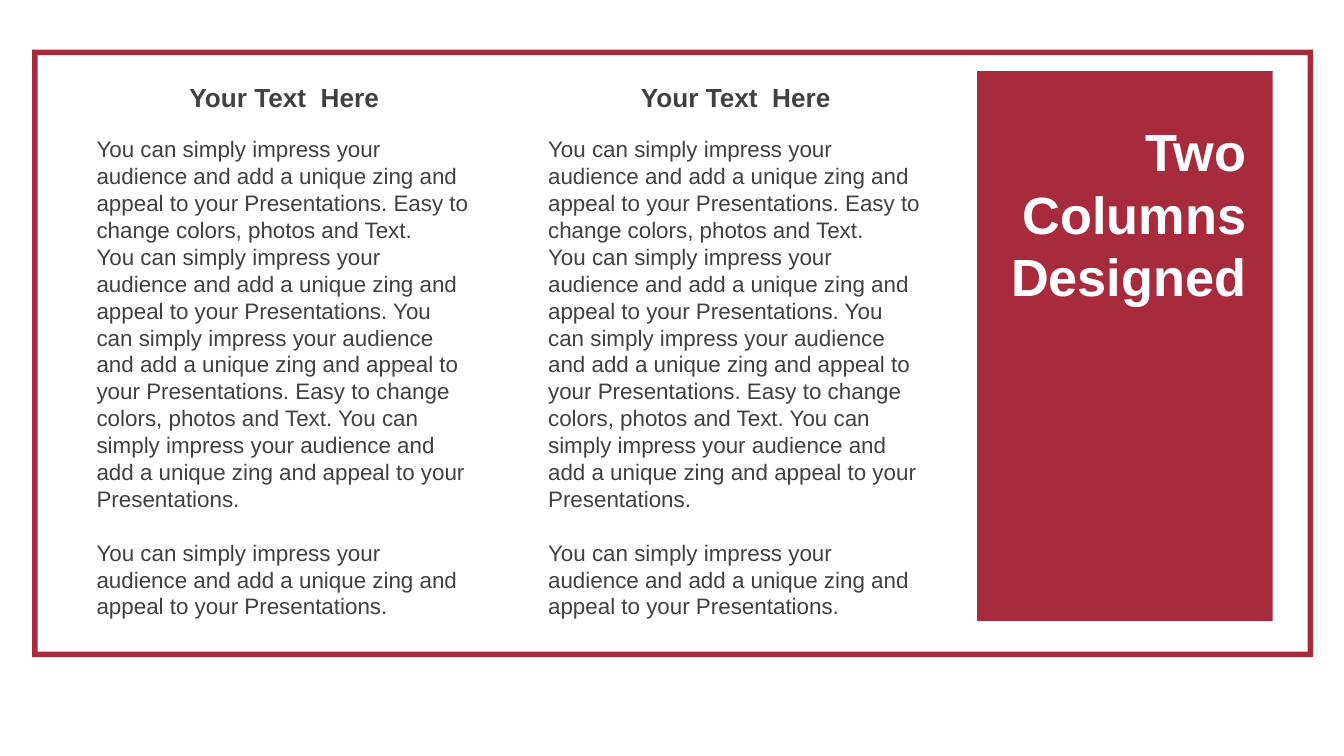
from pptx import Presentation
from pptx.dml.color import RGBColor
from pptx.enum.shapes import MSO_SHAPE as Shape
from pptx.enum.text import PP_ALIGN as Align
from pptx.util import Inches, Pt

CRIMSON, WHITE, CHARCOAL = "A82B3D", "FFFFFF", "404040"
TITLE = "Two Columns Designed"
HEADING = "Your Text  Here"
IMPRESS = ("You can simply impress your audience and add a unique zing "
           "and appeal to your Presentations.")
CHANGE = "Easy to change colors, photos and Text."
BODY = [
    f"{IMPRESS} {CHANGE}",
    f"{IMPRESS} {IMPRESS} {CHANGE} {IMPRESS}",
    IMPRESS,
]
TITLE_STYLE = {"size": Pt(28), "bold": True, "name": "Arial"}
HEADING_STYLE = {"size": Pt(14), "bold": True, "name": "Arial"}
BODY_STYLE = {"size": Pt(12), "bold": False, "name": "Arial"}
BODY_LINE = Pt(14.4)


def color(hex_value):
    """Turn a hex string into a colour."""
    return RGBColor.from_string(hex_value)


def add_block(slide, preset, left, top, width, height):
    """Draw a flat crimson shape."""
    block = slide.shapes.add_shape(
        preset, Inches(left), Inches(top), Inches(width), Inches(height))
    block.shadow.inherit = False
    block.fill.solid()
    block.fill.fore_color.rgb = color(CRIMSON)
    block.line.fill.background()
    return block


def add_copy(slide, left, top, width, height, texts, style, hex_value,
             align=Align.LEFT, spacing=None):
    """Place wrapped paragraphs in one style and return them."""
    frame = slide.shapes.add_textbox(
        Inches(left), Inches(top), Inches(width), Inches(height)).text_frame
    frame.word_wrap = True
    frame.text = "\n".join(texts)
    for paragraph in frame.paragraphs:
        paragraph.alignment = align
        paragraph.line_spacing = spacing
        for run in paragraph.runs:
            run.font.color.rgb = color(hex_value)
            for attribute, value in style.items():
                setattr(run.font, attribute, value)
    return frame.paragraphs


def add_border(slide, left, top, width, height):
    """Draw the thin border around the content."""
    border = add_block(slide, Shape.FRAME, left, top, width, height)
    border.adjustments[0] = 0.009


def add_title_panel(slide, left, top, width, height):
    """Draw the crimson panel with the slide title."""
    add_block(slide, Shape.RECTANGLE, left, top, width, height)
    add_copy(slide, left + 0.13, top + 0.31, width - 0.23, 1.58, [TITLE],
             TITLE_STYLE, WHITE, Align.RIGHT, Pt(33.5))


def add_column(slide, left, top, width, height):
    """Place a centred heading above its body text."""
    body_offset = 0.4
    body = add_copy(slide, left, top + body_offset, width,
                    height - body_offset, BODY, BODY_STYLE, CHARCOAL,
                    spacing=BODY_LINE)
    body[-1].space_before = BODY_LINE
    add_copy(slide, left, top, width, 0.34, [HEADING], HEADING_STYLE,
             CHARCOAL, Align.CENTER)


def main():
    """Build and save the slide."""
    deck = Presentation()
    deck.slide_width = Inches(10)
    deck.slide_height = deck.slide_width * 9 // 16
    slide = deck.slides.add_slide(deck.slide_layouts[6])
    add_border(slide, 0.24, 0.37, 9.53, 4.52)
    add_title_panel(slide, 7.27, 0.53, 2.2, 4.09)
    for index in range(2):
        add_column(slide, 0.62 + index * 3.36, 0.56, 2.99, 4.14)
    deck.save("out.pptx")


if __name__ == "__main__":
    main()
